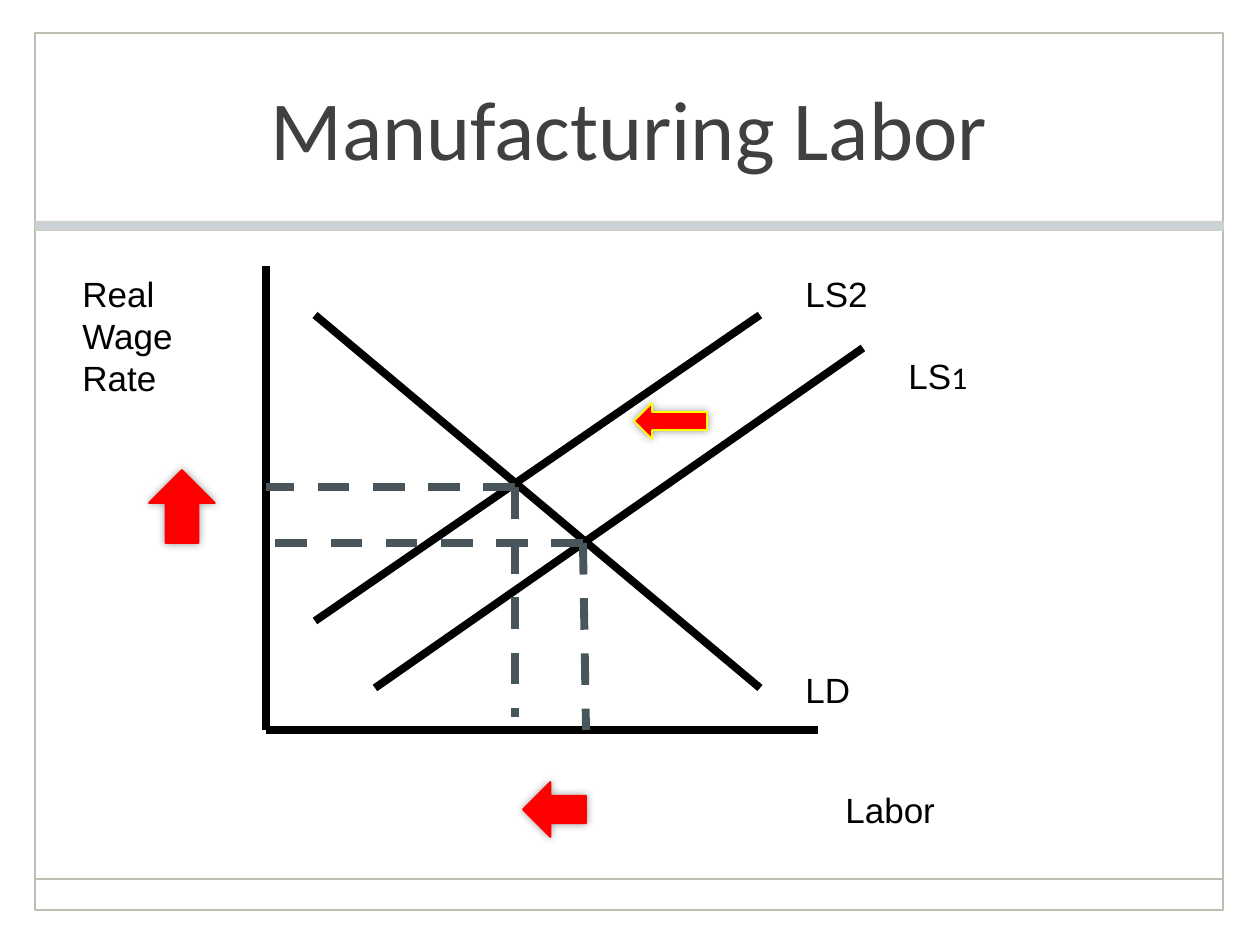
from lxml.etree import SubElement
from pptx import Presentation
from pptx.dml.color import RGBColor
from pptx.enum.dml import MSO_LINE
from pptx.enum.shapes import MSO_CONNECTOR, MSO_SHAPE
from pptx.enum.text import MSO_ANCHOR, PP_ALIGN
from pptx.oxml.ns import qn
from pptx.util import Emu, Pt

PX_PER_INCH = 126
COLORS = {
    "frame": "BEBDB2",
    "band": "CBD2D5",
    "band_edge": "D1D0C8",
    "title": "404040",
    "ink": "000000",
    "guide": "48565C",
    "shift": "FF0000",
    "highlight": "FFFF00",
}


def px(length):
    return Emu(round(length * 914400 / PX_PER_INCH))


def color(name):
    return RGBColor.from_string(COLORS[name])


def add_line(slide, start, end, ink="ink", width=4.5, dashed=False):
    line = slide.shapes.add_connector(
        MSO_CONNECTOR.STRAIGHT, *map(px, start + end))
    line.line.color.rgb = color(ink)
    line.line.width = Pt(width)
    if dashed:
        line.line.dash_style = MSO_LINE.DASH
    SubElement(line._element.spPr, qn("a:effectLst"))


def add_block(slide, preset, box, fill, edge, edge_width=1):
    block = slide.shapes.add_shape(preset, *map(px, box))
    block.shadow.inherit = False
    if fill:
        block.fill.solid()
        block.fill.fore_color.rgb = color(fill)
    else:
        block.fill.background()
    block.line.color.rgb = color(edge)
    block.line.width = Pt(edge_width)
    return block


def add_shift_arrow(slide, preset, box, edge="shift"):
    """Red block arrow with a soft glow-like shadow."""
    arrow = add_block(slide, preset, box, "shift", edge)
    effects = arrow._element.spPr.find(qn("a:effectLst"))
    shadow = SubElement(effects, qn("a:outerShdw"),
                        blurRad=str(Pt(5)), dist="0", dir="0", rotWithShape="0")
    tint = SubElement(shadow, qn("a:srgbClr"), val=COLORS["ink"])
    SubElement(tint, qn("a:alpha"), val="40000")


def set_font(font, name, size, ink):
    font.name = name
    font.size = Pt(size)
    font.color.rgb = color(ink)


def add_title(slide, text, box):
    frame = slide.shapes.add_textbox(*map(px, box)).text_frame
    frame.word_wrap = True
    frame.vertical_anchor = MSO_ANCHOR.MIDDLE
    paragraph = frame.paragraphs[0]
    paragraph.text = text
    paragraph.alignment = PP_ALIGN.CENTER
    set_font(paragraph.font, "Calibri", 48, "title")


def add_label(slide, lines, box, wrap=False):
    frame = slide.shapes.add_textbox(*map(px, box)).text_frame
    frame.word_wrap = wrap
    for index, text in enumerate(lines):
        paragraph = frame.add_paragraph() if index else frame.paragraphs[0]
        paragraph.text = text
        set_font(paragraph.font, "Arial", 20, "ink")
    return frame


def add_page_frame(slide):
    left, right = 35, 1223
    add_block(slide, MSO_SHAPE.RECTANGLE, (left, 33, right - left, 877), None, "frame")
    add_line(slide, (left, 879), (right, 879), "frame", 1)
    add_block(slide, MSO_SHAPE.RECTANGLE, (left, 221, right - left, 9),
              "band", "band_edge", 0.25)


def add_guides(slide, equilibrium, axis_x, foot):
    """Dashed lines from an equilibrium to both axes."""
    add_line(slide, equilibrium, foot, "guide", dashed=True)
    add_line(slide, equilibrium, (axis_x, equilibrium[1]), "guide", dashed=True)


def add_market(slide):
    origin = (266, 730)
    add_line(slide, (origin[0], 266), origin)
    add_line(slide, origin, (818, 730))
    add_label(slide, ["Real", "Wage", "Rate"], (70, 266, 145, 140), wrap=True)
    add_label(slide, ["Labor"], (833, 782, 116, 55))

    add_line(slide, (315, 315), (760, 688))
    add_label(slide, ["LD"], (793, 662, 71, 55))
    add_line(slide, (863, 348), (375, 688))
    old_supply = add_label(slide, ["LS"], (896, 348, 110, 55), wrap=True)
    subscript = old_supply.paragraphs[0].add_run()
    subscript.text = "1"
    set_font(subscript.font, "Calibri", 18, "ink")
    add_line(slide, (760, 315), (315, 621))
    add_label(slide, ["LS2"], (793, 266, 88, 55))

    add_shift_arrow(slide, MSO_SHAPE.LEFT_ARROW, (634, 403, 73, 36), "highlight")
    add_guides(slide, (515, 487), origin[0], (515, 717))
    add_guides(slide, (583, 543), origin[0], (586, 730))
    add_shift_arrow(slide, MSO_SHAPE.UP_ARROW, (149, 470, 66, 73))
    add_shift_arrow(slide, MSO_SHAPE.LEFT_ARROW, (523, 782, 63, 55))


def main():
    deck = Presentation()
    deck.slide_width, deck.slide_height = px(1260), px(945)
    slide = deck.slides.add_slide(deck.slide_layouts[6])
    add_page_frame(slide)
    add_title(slide, "Manufacturing Labor", (123, 34, 1012, 185))
    add_market(slide)
    deck.save("out.pptx")


if __name__ == "__main__":
    main()
